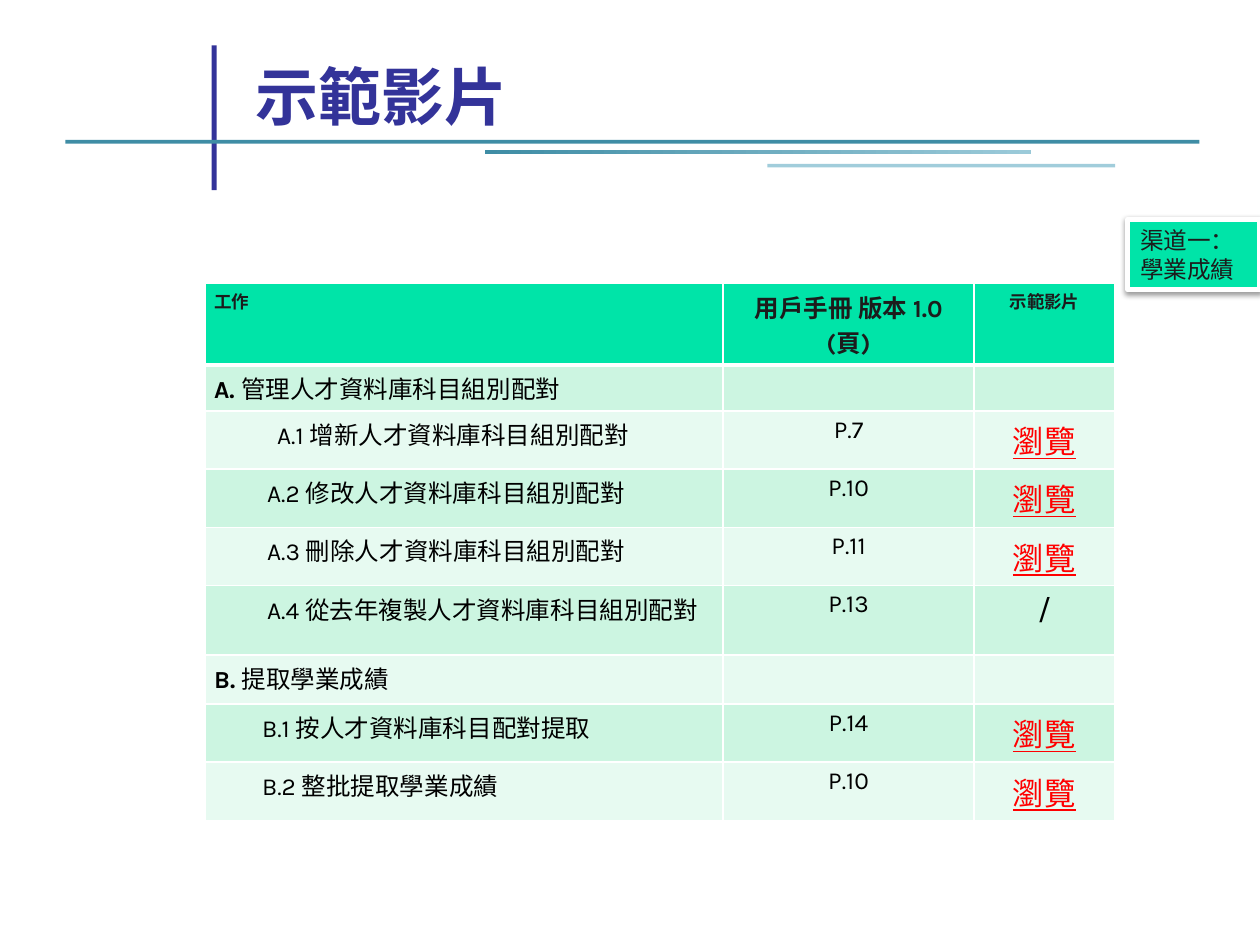
from lxml import etree
from pptx import Presentation
from pptx.dml.color import RGBColor
from pptx.enum.shapes import MSO_SHAPE
from pptx.enum.text import MSO_ANCHOR, PP_ALIGN
from pptx.oxml import parse_xml
from pptx.oxml.ns import nsdecls, qn
from pptx.util import Inches, Pt

RECTANGLE = MSO_SHAPE.RECTANGLE
LEFT, CENTER = PP_ALIGN.LEFT, PP_ALIGN.CENTER
BOTTOM, MIDDLE = MSO_ANCHOR.BOTTOM, MSO_ANCHOR.MIDDLE
FONT = "Karla"
NAVY, TEAL, GREEN, DARK = "333399", "3F8DA5", "00E4A8", "1C1C1C"
BLACK, WHITE, RED = "000000", "FFFFFF", "FF0000"
BANDS = ("CCF5E1", "E7FAF1")
COLUMN_WIDTHS = (4.11, 1.99, 1.12)
HEADER_HEIGHT = 0.63
VIEW = "瀏覽"
HEADERS = (("工作", 10, LEFT), ("用戶手冊 版本 1.0\n(頁)", 14, CENTER), ("示範影片", 10, CENTER))
TASKS = (
    ("A. ", "管理人才資料庫科目組別配對", "", "", 0, 0.36),
    ("", "A.1 增新人才資料庫科目組別配對", "P.7", VIEW, 0.5, 0.46),
    ("", "A.2 修改人才資料庫科目組別配對", "P.10", VIEW, 0.42, 0.46),
    ("", "A.3 刪除人才資料庫科目組別配對", "P.11", VIEW, 0.42, 0.46),
    ("", "A.4 從去年複製人才資料庫科目組別配對", "P.13", "/", 0.42, 0.55),
    ("B. ", "提取學業成績", "", "", 0, 0.39),
    ("", "B.1 按人才資料庫科目配對提取", "P.14", VIEW, 0.38, 0.46),
    ("", "B.2 整批提取學業成績", "P.10", VIEW, 0.38, 0.46),
)


def color(value):
    return RGBColor.from_string(value)


def add_text(paragraph, text, size=14, fill=BLACK, bold=False, underline=False, align=LEFT):
    paragraph.alignment = align
    run = paragraph.add_run()
    run.text = text
    font = run.font
    font.name, font.size = FONT, Pt(size)
    font.bold, font.underline = bold, underline
    font.color.rgb = color(fill)


def add_bar(slide, box, fill, end_fill=None):
    bar = slide.shapes.add_shape(RECTANGLE, *map(Inches, box))
    bar.shadow.inherit = False
    bar.line.fill.background()
    if end_fill:
        bar.fill.gradient()
        bar.fill.gradient_angle = 0
        for stop, stop_color in zip(bar.fill.gradient_stops, (fill, end_fill)):
            stop.color.rgb = color(stop_color)
    else:
        bar.fill.solid()
        bar.fill.fore_color.rgb = color(fill)
    return bar


def add_title(slide, box):
    title = slide.shapes.title
    title.left, title.top, title.width, title.height = map(Inches, box)
    title.text_frame.vertical_anchor = BOTTOM
    add_text(title.text_frame.paragraphs[0], "示範影片", size=36, fill=NAVY, bold=True)


def add_decoration(slide, left, top):
    add_bar(slide, (left + 1.16, top, 0.04, 1.15), NAVY)
    add_bar(slide, (left, top + 0.75, 9, 0.03), TEAL)
    add_bar(slide, (left + 3.33, top + 0.83, 4.33, 0.03), TEAL, "9BCAD9")
    add_bar(slide, (left + 5.57, top + 0.94, 2.76, 0.03), "A1CDDB")


def format_cell(cell, fill, top_width=1, bottom_width=1):
    cell.margin_left = cell.margin_right = Inches(0.07)
    cell.margin_top = cell.margin_bottom = Inches(0.04)
    properties = cell._tc.get_or_add_tcPr()
    for side, width in (("L", 1), ("R", 1), ("T", top_width), ("B", bottom_width)):
        border = etree.SubElement(properties, qn(f"a:ln{side}"), w=str(Pt(width)))
        line_fill = etree.SubElement(border, qn("a:solidFill"))
        etree.SubElement(line_fill, qn("a:srgbClr"), val=WHITE)
    cell.fill.solid()
    cell.fill.fore_color.rgb = color(fill)


def fill_header(table):
    for cell, (text, size, align) in zip(table.rows[0].cells, HEADERS):
        format_cell(cell, GREEN, bottom_width=3)
        for index, line in enumerate(text.split("\n")):
            frame = cell.text_frame
            paragraph = frame.add_paragraph() if index else frame.paragraphs[0]
            add_text(paragraph, line, size=size, fill=DARK, bold=True, align=align)


def fill_task(cells, task, band, top_width):
    prefix, name, page, video, indent, _ = task
    for cell in cells:
        format_cell(cell, band, top_width=top_width)
    name_cell, page_cell, video_cell = cells
    paragraph = name_cell.text_frame.paragraphs[0]
    if prefix:
        add_text(paragraph, prefix, bold=True)
    add_text(paragraph, name)
    name_cell.margin_left = Inches(0.07 + indent)
    if not page:
        for cell in (page_cell, video_cell):
            cell.margin_top = cell.margin_bottom = 0
        return
    add_text(page_cell.text_frame.paragraphs[0], page, align=CENTER)
    linked = video == VIEW
    video_cell.margin_top = video_cell.margin_bottom = Inches(0.05)
    add_text(video_cell.text_frame.paragraphs[0], video, size=18,
             fill=RED if linked else BLACK, underline=linked, align=CENTER)


def add_task_table(slide, left, top):
    heights = [HEADER_HEIGHT] + [task[-1] for task in TASKS]
    frame = slide.shapes.add_table(
        len(heights), len(COLUMN_WIDTHS), Inches(left), Inches(top),
        Inches(sum(COLUMN_WIDTHS)), Inches(sum(heights)))
    table = frame.table
    for column, width in zip(table.columns, COLUMN_WIDTHS):
        column.width = Inches(width)
    for row, height in zip(table.rows, heights):
        row.height = Inches(height)
    fill_header(table)
    for index, task in enumerate(TASKS):
        fill_task(list(table.rows[index + 1].cells), task, BANDS[index % 2], 1 if index else 3)


def add_channel_label(slide, box):
    label = add_bar(slide, box, GREEN)
    label.line.color.rgb = color(WHITE)
    label.line.width = Pt(3)
    effects = label._element.spPr.find(qn("a:effectLst"))
    effects.append(parse_xml(
        f'<a:outerShdw {nsdecls("a")} blurRad="{Pt(3.1)}" dist="{Pt(1.6)}" dir="5400000" '
        f'rotWithShape="0"><a:srgbClr val="{BLACK}"><a:alpha val="38000"/></a:srgbClr></a:outerShdw>'))
    label.text_frame.word_wrap = True
    label.text_frame.vertical_anchor = MIDDLE
    add_text(label.text_frame.paragraphs[0], "渠道一：學業成績", size=13.5, fill=DARK)


def main():
    presentation = Presentation()
    presentation.slide_width, presentation.slide_height = Inches(10), Inches(7.5)
    slide = presentation.slides.add_slide(presentation.slide_layouts[5])
    add_decoration(slide, 0.52, 0.36)
    add_title(slide, (1.93, 0.28, 7.83, 0.83))
    add_task_table(slide, 1.63, 2.25)
    add_channel_label(slide, (8.95, 1.74, 1.05, 0.56))
    presentation.save("out.pptx")


if __name__ == "__main__":
    main()
